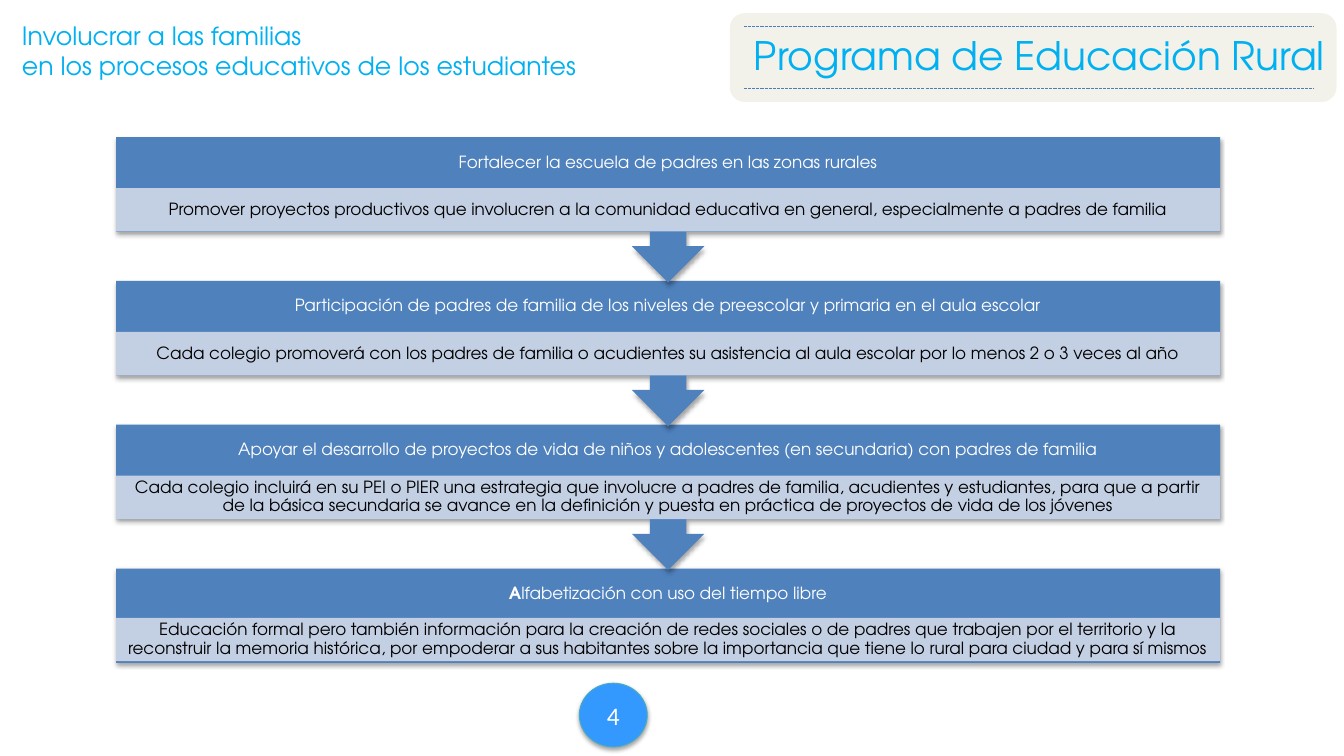
from dataclasses import dataclass

from lxml import etree
from pptx import Presentation
from pptx.dml.color import RGBColor
from pptx.enum import dml, shapes, text
from pptx.oxml import ns, parse_xml
from pptx.util import Pt


@dataclass(frozen=True)
class Theme:
    font: str = "TeX Gyre Adventor"
    number_font: str = "Calibri"
    title_size: int = 28
    heading_size: int = 18
    body_size: int = 12
    cyan: str = "00B0F0"
    blue: str = "4F81BD"
    pale_blue: str = "D0D8E8"
    cream: str = "EEECE1"
    rule: str = "4B7EBC"
    badge: str = "3399FF"
    badge_line: str = "46AAC5"
    white: str = "FFFFFF"
    black: str = "000000"


theme = Theme()
presentation = Presentation()
presentation.slide_width, presentation.slide_height = Pt(960), Pt(540)
slide = presentation.slides.add_slide(presentation.slide_layouts[6])


def add_filled(kind, box, color, opacity=100, shadow=False):
    shape = slide.shapes.add_shape(kind, *map(Pt, box))
    shape.shadow.inherit = False
    shape.fill.solid()
    shape.fill.fore_color.rgb = RGBColor.from_string(color)
    shape.line.fill.background()
    if opacity < 100:
        fill_color = shape.fill._xPr.find(".//" + ns.qn("a:srgbClr"))
        etree.SubElement(fill_color, ns.qn("a:alpha"), val=str(opacity * 1000))
    if shadow:
        effects = shape._element.spPr.find(ns.qn("a:effectLst"))
        effects.append(parse_xml(
            f'<a:outerShdw {ns.nsdecls("a")} blurRad="40000" dist="23000" '
            'dir="5400000" rotWithShape="0"><a:srgbClr val="000000">'
            '<a:alpha val="35000"/></a:srgbClr></a:outerShdw>'))
    return shape


def add_text(box, lines, size, color, margins=None, wrap=True):
    shape = slide.shapes.add_textbox(*map(Pt, box))
    frame = shape.text_frame
    frame.word_wrap = wrap
    frame.text = "\n".join(lines)
    for paragraph in frame.paragraphs:
        paragraph.font.name = theme.font
        paragraph.font.size = Pt(size)
        paragraph.font.color.rgb = RGBColor.from_string(color)
    if margins:
        frame.margin_left = frame.margin_right = Pt(margins[0])
        frame.margin_top = frame.margin_bottom = Pt(margins[1])
        frame.vertical_anchor = text.MSO_ANCHOR.MIDDLE
        paragraph.alignment = text.PP_ALIGN.CENTER
        paragraph.line_spacing = 0.9
    return frame


steps = [
    ("Fortalecer la escuela de padres en las zonas rurales",
     "Promover proyectos productivos que involucren a la comunidad educativa en general, "
     "especialmente a padres de familia"),
    ("Participación de padres de familia de los niveles de preescolar y primaria en el aula escolar",
     "Cada colegio promoverá con los padres de familia o acudientes su asistencia al aula escolar "
     "por lo menos 2 o 3 veces al año"),
    ("Apoyar el desarrollo de proyectos de vida de niños y adolescentes (en secundaria) "
     "con padres de familia",
     "Cada colegio incluirá en su PEI o PIER una estrategia que involucre a padres de familia, "
     "acudientes y estudiantes, para que a partir de la básica secundaria se avance en la "
     "definición y puesta en práctica de proyectos de vida de los jóvenes"),
    ("Alfabetización con uso del tiempo libre",
     "Educación formal pero también información para la creación de redes sociales o de padres "
     "que trabajen por el territorio y la reconstruir la memoria histórica, por empoderar a sus "
     "habitantes sobre la importancia que tiene lo rural para ciudad y para sí mismos"),
]
left, width, first_top, pitch = 82.9, 788.6, 98, 102.7
last = len(steps) - 1

for index, (heading, detail) in reversed(list(enumerate(steps))):
    top = first_top + index * pitch
    if index == last:
        add_filled(shapes.MSO_SHAPE.RECTANGLE, (left, top, width, 67.5), theme.blue, shadow=True)
        detail_top = top + 35.2
    else:
        callout = add_filled(shapes.MSO_SHAPE.UP_ARROW_CALLOUT,
                             (left, top, width, 103.8), theme.blue, shadow=True)
        callout.rotation = 180
        detail_top = top + 36.4
    heading_frame = add_text((left, top, width, 36.4), [heading],
                             theme.body_size, theme.white, (6.7, 6.7))
    if index == last:
        paragraph = heading_frame.paragraphs[0]
        paragraph.runs[0].text = heading[0]
        paragraph.runs[0].font.bold = True
        paragraph.add_run().text = heading[1:]
    detail_box = (left, detail_top, width, 31)
    add_filled(shapes.MSO_SHAPE.RECTANGLE, detail_box, theme.pale_blue, opacity=90)
    add_text(detail_box, [detail], theme.body_size, theme.black, (6.7, 1.2))

add_filled(shapes.MSO_SHAPE.ROUNDED_RECTANGLE, (521.3, 9.4, 433.4, 63.4), theme.cream, opacity=68)
add_text((531.4, 18.7, 433.4, 70.6), ["Programa de Educación Rural"], theme.title_size, theme.cyan)

for rule_top in (18.7, 63.4):
    rule = slide.shapes.add_connector(shapes.MSO_CONNECTOR.STRAIGHT,
                                      Pt(531.4), Pt(rule_top), Pt(938.9), Pt(rule_top))
    rule.line.color.rgb = RGBColor.from_string(theme.rule)
    rule.line.width = Pt(0.75)
    rule.line.dash_style = dml.MSO_LINE.SQUARE_DOT
    etree.SubElement(rule._element.spPr, ns.qn("a:effectLst"))

badge = add_filled(shapes.MSO_SHAPE.OVAL, (413.8, 488, 48.5, 45.5), theme.badge, shadow=True)
badge.line.color.rgb = RGBColor.from_string(theme.badge_line)
badge.line.width = Pt(0.75)
badge.text_frame.text = "4"
badge.text_frame.vertical_anchor = text.MSO_ANCHOR.MIDDLE
number = badge.text_frame.paragraphs[0]
number.alignment = text.PP_ALIGN.CENTER
number.font.name = theme.number_font
number.font.size = Pt(theme.heading_size)
number.font.color.rgb = RGBColor.from_string(theme.white)

add_text((8.6, 10.8, 419, 51),
         ["Involucrar a las familias", "en los procesos educativos de los estudiantes"],
         theme.heading_size, theme.cyan, wrap=False)

presentation.save("out.pptx")
